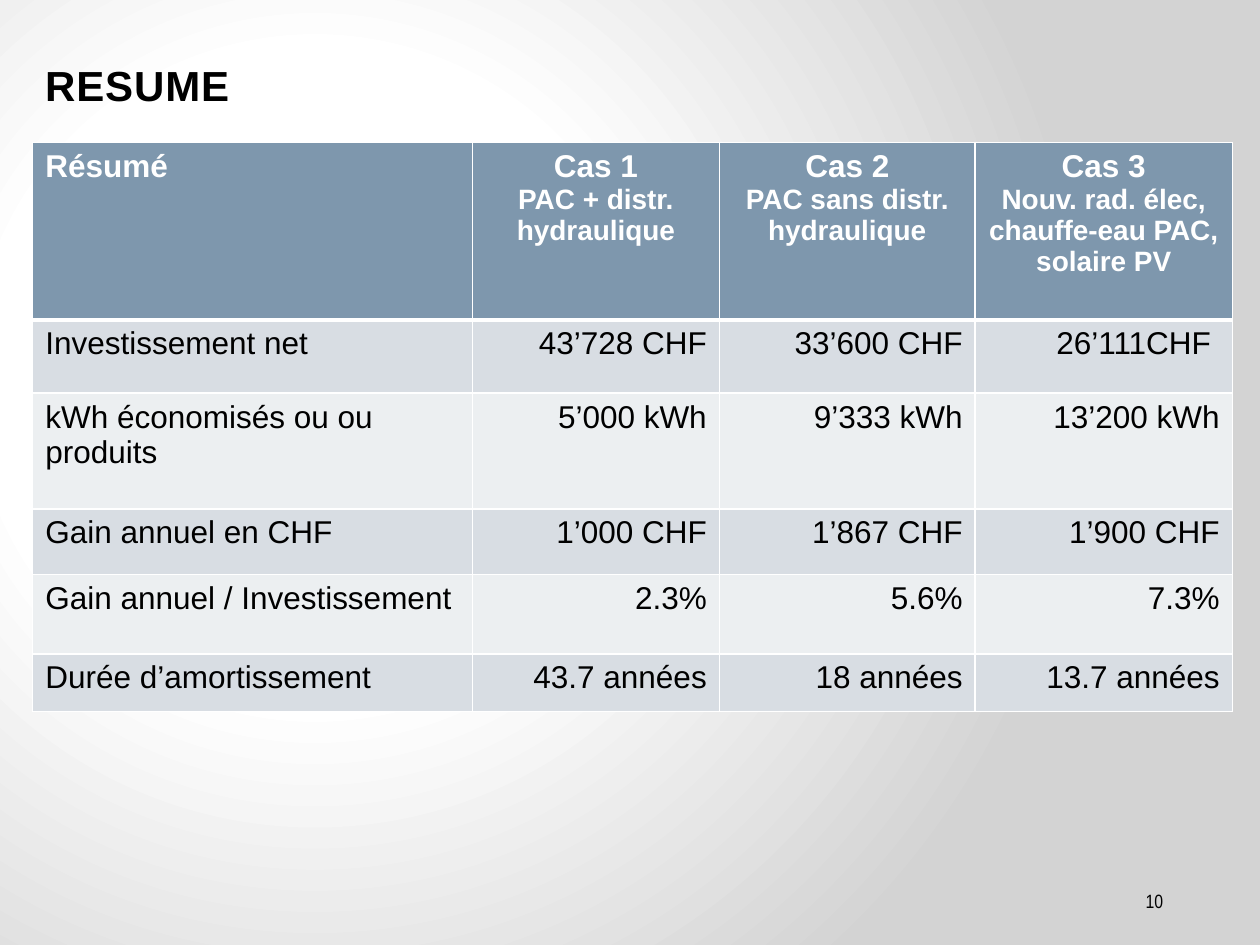
from lxml import etree
from pptx import Presentation
from pptx import util as u
from pptx.dml.color import RGBColor
from pptx.enum import text
from pptx.oxml import parse_xml
from pptx.oxml.ns import qn

NS = 'xmlns:a="http://schemas.openxmlformats.org/drawingml/2006/main"'
HUES = {"ink": "000000", "white": "FFFFFF", "head": "7E97AD",
        "odd": "D8DDE3", "even": "ECEFF1", "edge": "D3D3D3"}
LEFT, MID, RIGHT = text.PP_ALIGN.LEFT, text.PP_ALIGN.CENTER, text.PP_ALIGN.RIGHT
COLS = [251.3, 141.1, 146.2, 146.9]
ROWS = [101.5, 41.8, 66.2, 37.4, 45.4, 33.1]
HEADS = ["Résumé", "Cas 1\nPAC + distr. hydraulique", "Cas 2\nPAC sans distr. hydraulique",
         "Cas 3\nNouv. rad. élec, chauffe-eau PAC, solaire PV"]
CASES = [
    ["Investissement net", "43’728 CHF", "33’600 CHF", "26’111CHF "],
    ["kWh économisés ou ou produits", "5’000 kWh", "9’333 kWh", "13’200 kWh"],
    ["Gain annuel en CHF", "1’000 CHF", "1’867 CHF", "1’900 CHF"],
    ["Gain annuel / Investissement", "2.3%", "5.6%", "7.3%"],
    ["Durée d’amortissement", "43.7 années", "18 années", "13.7 années"],
]


class Deck:
    """Holds the style and the current slide."""

    def __init__(self, wide, high):
        self.show = Presentation()
        self.show.slide_width, self.show.slide_height = u.Pt(wide), u.Pt(high)
        self.slide = self.show.slides.add_slide(self.show.slide_layouts[6])

    def glow(self, stops, left, top, right, bottom):
        self.slide.background.fill.solid()
        solid = self.slide._element.find(".//" + qn("p:bgPr")).find(qn("a:solidFill"))
        marks = "".join(f'<a:gs pos="{pos * 1000}"><a:srgbClr val="{HUES[hue]}"/></a:gs>'
                        for pos, hue in stops)
        solid.getparent().replace(solid, parse_xml(
            f'<a:gradFill {NS} rotWithShape="1"><a:gsLst>{marks}</a:gsLst>'
            f'<a:path path="circle"><a:fillToRect l="{left * 1000}" t="{top * 1000}" '
            f'r="{right * 1000}" b="{bottom * 1000}"/></a:path></a:gradFill>'))

    def style(self, para, size, hue="ink", bold=False, align=LEFT, face="Arial"):
        para.alignment = align
        for run in para.runs:
            font = run.font
            font.name, font.size, font.bold = face, u.Pt(size), bold
            font.color.rgb = RGBColor.from_string(HUES[hue])

    def label(self, words, box, size, anchor, **look):
        frame = self.slide.shapes.add_textbox(*map(u.Pt, box)).text_frame
        frame.word_wrap, frame.vertical_anchor = True, anchor
        frame.text = words
        self.style(frame.paragraphs[0], size, **look)
        return frame.paragraphs[0]

    def border(self, cell, base):
        props = cell._tc.get_or_add_tcPr()
        for spot, side in enumerate("LRTB"):
            width = u.Pt(base if side == "B" else 1)
            props.insert(spot, parse_xml(
                f'<a:ln{side} {NS} w="{width}"><a:solidFill>'
                f'<a:srgbClr val="{HUES["white"]}"/></a:solidFill></a:ln{side}>'))

    def table(self, data, left, top, cols, rows):
        box = map(u.Pt, (left, top, sum(cols), sum(rows)))
        grid = self.slide.shapes.add_table(len(rows), len(cols), *box).table
        for col, width in zip(grid.columns, cols):
            col.width = u.Pt(width)
        for r, (row, high) in enumerate(zip(data, rows)):
            grid.rows[r].height = u.Pt(high)
            fill = "head" if r == 0 else "odd" if r % 2 else "even"
            for c, words in enumerate(row):
                cell = grid.cell(r, c)
                cell.text_frame.text = words
                cell.fill.solid()
                cell.fill.fore_color.rgb = RGBColor.from_string(HUES[fill])
                self.border(cell, 1 if r else 3)
                align = LEFT if c == 0 else RIGHT if r else MID
                for p, para in enumerate(cell.text_frame.paragraphs):
                    self.style(para, 16 if p else 18, "ink" if r else "white", r == 0, align)


def main():
    deck = Deck(720, 540)
    deck.glow([(0, "white"), (41, "white"), (100, "edge")], 50, 80, 100, 100)
    deck.label("10", (594, 500.4, 77.8, 28.8), 11, text.MSO_ANCHOR.MIDDLE,
               align=RIGHT, face="Arial Narrow")
    deck.table([HEADS] + CASES, 18.7, 81.4, COLS, ROWS)
    title = deck.label("RESUME", (18.7, 25.2, 690.5, 41), 24, text.MSO_ANCHOR.BOTTOM, bold=True)
    title.line_spacing = 1.1
    title.runs[0].font._element.set("spc", "50")
    deck.show.save("out.pptx")


if __name__ == "__main__":
    main()
